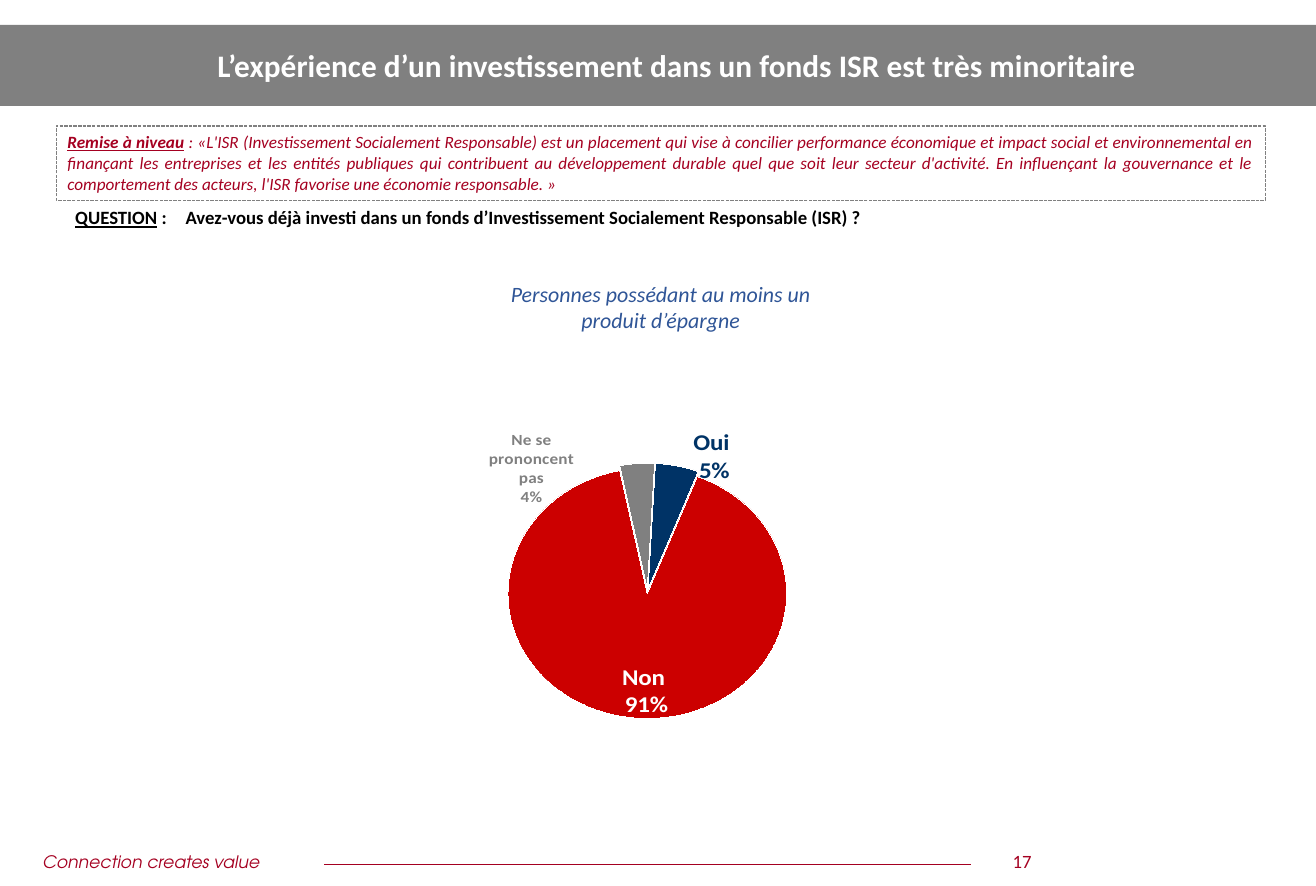
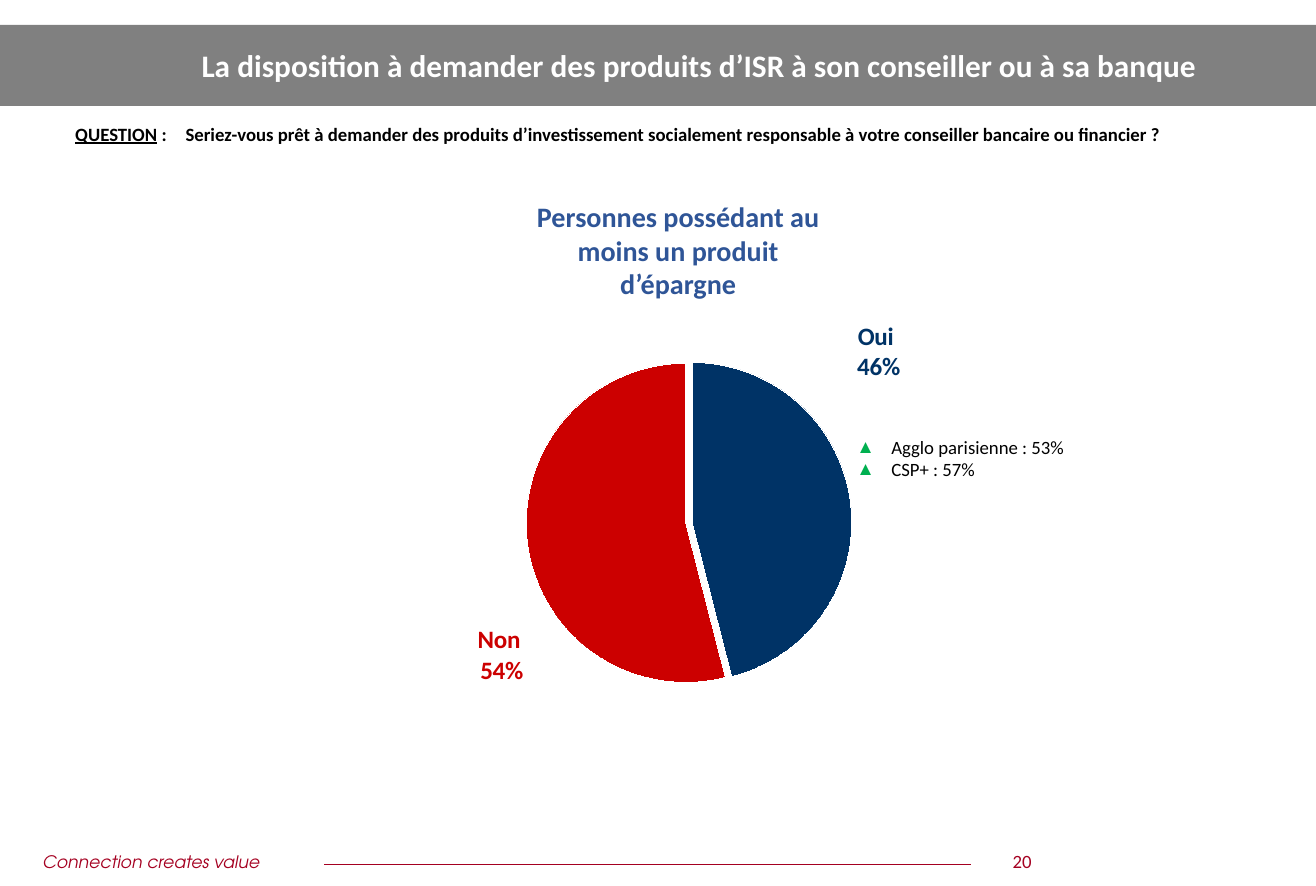
from lxml.etree import SubElement
from pptx import Presentation
from pptx.chart.data import CategoryChartData as Data
from pptx.dml.color import RGBColor as Color
from pptx.enum.chart import XL_CHART_TYPE as Kind, XL_LABEL_POSITION as Pos
from pptx.enum.dml import MSO_LINE as Dash
from pptx.enum.shapes import MSO_CONNECTOR as Link, MSO_SHAPE as Shape
from pptx.enum.text import MSO_ANCHOR as Anchor, MSO_AUTO_SIZE as Fit, PP_ALIGN as Align
from pptx.oxml import parse_xml
from pptx.oxml.ns import nsdecls, qn
from pptx.util import Pt

PX = 9144
WHITE = Color(0xFF, 0xFF, 0xFF)
BLACK = Color(0x00, 0x00, 0x00)
GREY = Color(0x80, 0x80, 0x80)
WINE = Color(0xA5, 0x00, 0x21)
BLUE = Color(0x2F, 0x55, 0x97)
NAVY = Color(0x00, 0x33, 0x66)
RED = Color(0xCC, 0x00, 0x00)
GREEN = Color(0x00, 0xB0, 0x50)
BODY = "Calibri"
BRAND = "TeX Gyre Adventor"
GROUP = "Personnes possédant au moins un produit d’épargne"


def scale(*sizes):
    return [size * PX for size in sizes]


def layout(x, y, w=None, h=None):
    tags = "" if w is None else '<c:layoutTarget val="inner"/><c:xMode val="edge"/><c:yMode val="edge"/>'
    sizes = zip("xywh", (x, y, w, h))
    tags += "".join(f'<c:{key} val="{val}"/>' for key, val in sizes if val is not None)
    return parse_xml(f'<c:layout {nsdecls("c")}><c:manualLayout>{tags}</c:manualLayout></c:layout>')


class Deck:
    def __init__(self):
        self.show = Presentation()
        self.show.slide_width, self.show.slide_height = scale(1169, 787)

    def style(self, face, size, tint, bold=False, slant=False, font=BODY):
        face.name, face.size = font, Pt(size)
        face.bold, face.italic = bold, slant
        face.color.rgb = tint

    def start(self, title, left, width, page):
        self.slide = self.show.slides.add_slide(self.show.slide_layouts[5])
        self.shapes = self.slide.shapes
        self.band()
        self.title(title, left, width)
        self.text((28, 751, 308, 29), ["Connection creates value"], 11, WINE,
                  slant=True, font=BRAND)
        self.rule(288, 863, 768)
        self.text((877, 750, 62, 30), [page], 12, WINE, align=Align.CENTER)

    def band(self):
        band = self.shapes.add_shape(Shape.RECTANGLE, *scale(0, 22, 1169, 72))
        band.shadow.inherit = False
        band.fill.solid()
        band.fill.fore_color.rgb = GREY
        band.line.fill.background()
        self.shapes._spTree.insert(2, band._element)

    def title(self, words, left, width):
        title = self.shapes.title
        title.left, title.top, title.width, title.height = scale(left, 22, width, 72)
        frame = title.text_frame
        frame.text = words
        frame.word_wrap, frame.auto_size = True, Fit.NONE
        frame.vertical_anchor = Anchor.MIDDLE
        para = frame.paragraphs[0]
        para.alignment = Align.JUSTIFY
        self.style(para.font, 20, WHITE, bold=True)

    def rule(self, left, right, top):
        line = self.shapes.add_connector(Link.STRAIGHT, *scale(left, top, right, top))
        line.line.color.rgb = WINE
        line.line.width = Pt(0.5)
        SubElement(line._element.spPr, qn("a:effectLst"))

    def text(self, spot, lines, size, tint, bold=False, slant=False, font=BODY,
             align=Align.LEFT, lead="", hang=0, mark=None):
        box = self.shapes.add_textbox(*scale(*spot))
        frame = box.text_frame
        frame.word_wrap = True
        for num, line in enumerate(lines):
            para = frame.add_paragraph() if num else frame.paragraphs[0]
            para.alignment = align
            if hang:
                props = para._p.get_or_add_pPr()
                props.set("marL", str(hang * PX))
                props.set("indent", str(-hang * PX))
                if mark:
                    tone = SubElement(props, qn("a:buClr"))
                    SubElement(tone, qn("a:srgbClr"), val=str(GREEN))
                    SubElement(props, qn("a:buFont"), typeface="Arial")
                    SubElement(props, qn("a:buChar"), char=mark)
            self.style(para.font, size, tint, bold, slant, font)
            if lead:
                head = para.add_run()
                head.text = lead
                head.font.bold = head.font.underline = True
            para.add_run().text = line
        return box

    def ask(self, top, words):
        box = self.text((57, top, 1067, 28), [" :\t" + words], 12, BLACK, bold=True,
                        align=Align.JUSTIFY, lead="QUESTION", hang=98)
        box.text_frame.margin_right = 36 * PX

    def note(self, spot, lead, words):
        box = self.text(spot, [words], 11, WINE, slant=True, align=Align.JUSTIFY, lead=lead)
        box.line.color.rgb = GREY
        box.line.width = Pt(0.75)
        box.line.dash_style = Dash.SQUARE_DOT

    def pie(self, spot, plot, turn, slices):
        data = Data(number_format="0%")
        data.categories = [item[0] for item in slices]
        data.add_series("Series 1", [item[1] for item in slices])
        chart = self.shapes.add_chart(Kind.PIE, *scale(*spot), data).chart
        chart.has_legend = chart.has_title = False
        chart.font.name, chart.font.size = BODY, Pt(18)
        chart.font.color.rgb = BLACK
        pie = chart.plots[0]
        pie.vary_by_categories = True
        row = pie.series[0]
        tags = row.data_labels
        tags.show_value = False
        tags.show_category_name = tags.show_percentage = True
        tags.number_format, tags.number_format_is_linked = "0%", False
        tags.position = Pos.OUTSIDE_END
        self.style(tags.font, 16, BLACK, bold=True)
        for num, (_, _, fill, tint, size, pos, shift) in enumerate(slices):
            point = row.points[num]
            point.format.fill.solid()
            point.format.fill.fore_color.rgb = fill
            point.format.line.color.rgb = WHITE
            label = point.data_label
            self.style(label.font, size, tint, bold=True)
            label.position = pos
            node = row._element.xpath(f"c:dLbls/c:dLbl[c:idx/@val='{num}']")[0]
            node.find(qn("c:idx")).addnext(layout(*shift))
            first = num == 0
            for key, on in (("showVal", first), ("showCatName", True), ("showPercent", not first)):
                node.find(qn("c:" + key)).set("val", str(int(on)))
            SubElement(node, qn("c:separator")).text = "\n"
        for lines in row._element.xpath("c:dLbls/c:showLeaderLines"):
            lines.set("val", "0")
        burst = parse_xml(f'<c:explosion {nsdecls("c")} val="2"/>')
        row._element.find(qn("c:dPt")).addprevious(burst)
        for old in pie._element.findall(qn("c:firstSliceAng")):
            pie._element.remove(old)
        SubElement(pie._element, qn("c:firstSliceAng"), val=str(turn))
        area = pie._element.getparent()
        for old in area.findall(qn("c:layout")):
            area.remove(old)
        area.insert(0, layout(*plot))


def main():
    deck = Deck()
    deck.start("L’expérience d’un investissement dans un fonds ISR est très minoritaire",
               183, 948, "17")
    deck.ask(178, "Avez-vous déjà investi dans un fonds d’Investissement Socialement "
                  "Responsable (ISR) ?")
    deck.note((50, 112, 1074, 66), "Remise à niveau",
              " : «L'ISR (Investissement Socialement Responsable) est un placement qui vise à "
              "concilier performance économique et impact social et environnemental en finançant "
              "les entreprises et les entités publiques qui contribuent au développement durable "
              "quel que soit leur secteur d'activité. En influençant la gouvernance et le "
              "comportement des acteurs, l'ISR favorise une économie responsable. »")
    deck.text((434, 244, 306, 57), [GROUP], 14, BLUE, slant=True, align=Align.CENTER)
    deck.pie((335, 339, 445, 346), (0.18, 0.12, 0.72, 0.73), 3, [
        ("Oui ", 0.05, NAVY, NAVY, 16, Pos.OUTSIDE_END, (0.03, 0.07)),
        ("Non ", 0.91, RED, WHITE, 16, Pos.INSIDE_END, (0.02, 0.02)),
        ("Ne se prononcent pas", 0.04, GREY, GREY, 11, Pos.OUTSIDE_END, (-0.21, 0.14))])

    deck.start("La disposition à demander des produits d’ISR à son conseiller ou à sa banque",
               169, 981, "20")
    deck.ask(104, "Seriez-vous prêt à demander des produits d’investissement socialement "
                  "responsable à votre conseiller bancaire ou financier ?")
    deck.text((451, 172, 303, 101), [GROUP], 18, BLUE, bold=True, align=Align.CENTER)
    deck.pie((374, 286, 445, 346), (0.21, 0.09, 0.65, 0.85), 0, [
        ("Oui ", 0.46, NAVY, NAVY, 16, Pos.OUTSIDE_END, (0, -0.32)),
        ("Non ", 0.54, RED, RED, 16, Pos.OUTSIDE_END, (0.01, 0.21))])
    deck.text((751, 382, 244, 50), ["Agglo parisienne : 53%", "CSP+ : 57%"], 12, BLACK,
              hang=31, mark="▲")
    deck.show.save("out.pptx")


if __name__ == "__main__":
    main()
